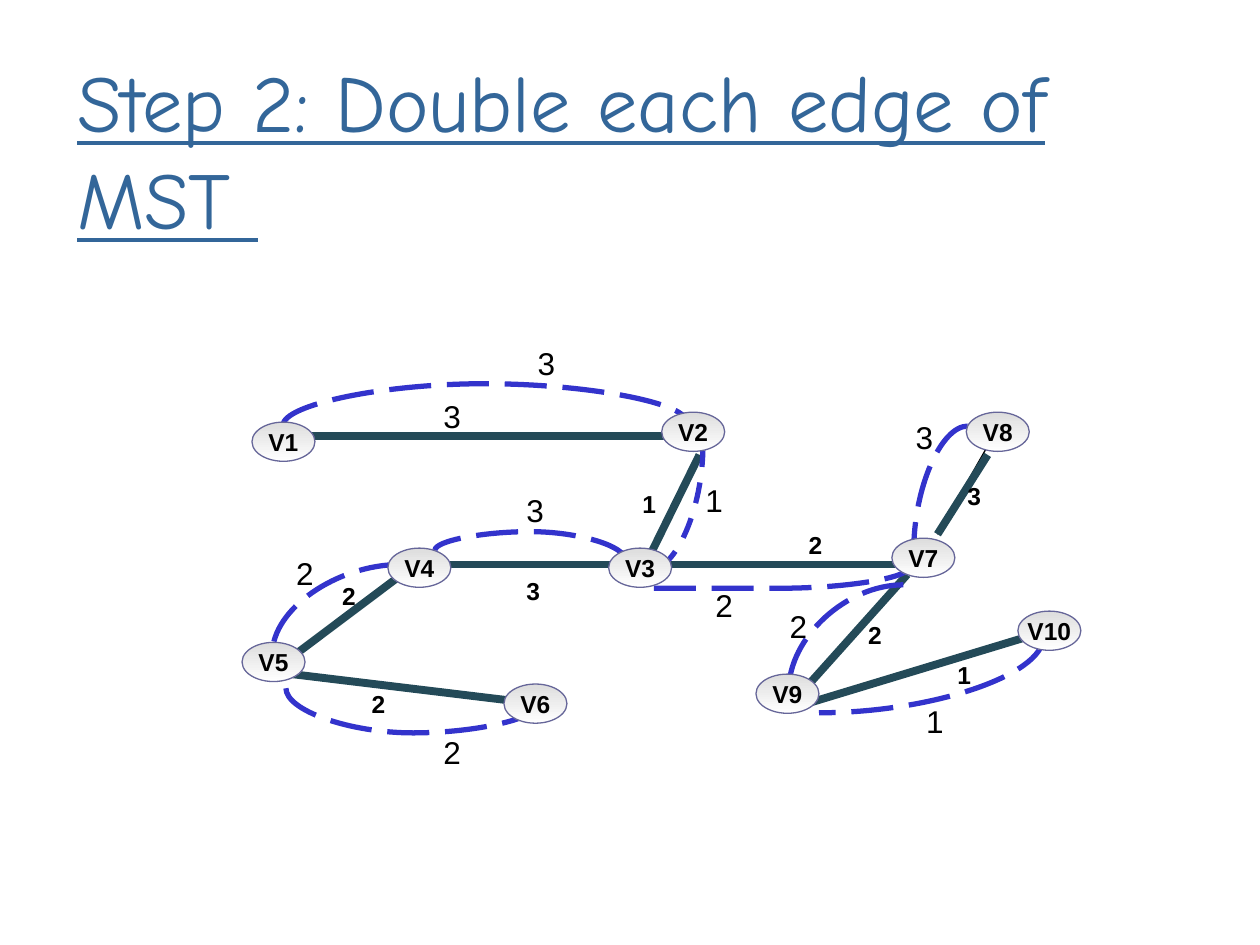
import pptx
import pptx.util
import pptx.dml.color
import pptx.enum.dml
import pptx.enum.shapes
import pptx.enum.text
import pptx.oxml.ns
import lxml.etree

Cm = pptx.util.Cm
Pt = pptx.util.Pt
RGBColor = pptx.dml.color.RGBColor
Align = pptx.enum.text.PP_ALIGN
Anchor = pptx.enum.text.MSO_ANCHOR
Dash = pptx.enum.dml.MSO_LINE
Connector = pptx.enum.shapes.MSO_CONNECTOR
qn = pptx.oxml.ns.qn

TITLE_BLUE = RGBColor(0x33, 0x66, 0x99)
BLACK = RGBColor(0x00, 0x00, 0x00)
TREE_TEAL = RGBColor(0x24, 0x4A, 0x58)
DOUBLE_BLUE = RGBColor(0x33, 0x33, 0xCC)
NODE_GREY = RGBColor(0xDD, 0xDD, 0xDD)
WHITE = RGBColor(0xFF, 0xFF, 0xFF)
NODE_OUTLINE = RGBColor(0x66, 0x66, 0x99)


def write_text(shape, text, size, font="Arial", color=BLACK, bold=False,
               underline=False, align=Align.LEFT, anchor=Anchor.TOP, wrap=False):
    frame = shape.text_frame
    frame.word_wrap = wrap
    frame.vertical_anchor = anchor
    paragraph = frame.paragraphs[0]
    paragraph.alignment = align
    run = paragraph.add_run()
    run.text = text
    run.font.size = Pt(size)
    run.font.name = font
    run.font.bold = bold
    run.font.underline = underline
    run.font.color.rgb = color


def add_line(kind, start, end, color, width):
    line = slide.shapes.add_connector(kind, *[Cm(value) for value in (*start, *end)])
    line.line.color.rgb = color
    line.line.width = Pt(width)
    lxml.etree.SubElement(line.element.spPr, qn("a:effectLst"))
    return line


presentation = pptx.Presentation()
presentation.slide_width = Cm(25.4)
presentation.slide_height = Cm(19.05)
slide = presentation.slides.add_slide(presentation.slide_layouts[5])

title = slide.shapes.title
title.left, title.top, title.width, title.height = Cm(1.3), Cm(0.91), Cm(22.43), Cm(4.19)
write_text(title, "Step 2: Double each edge of MST ", 46, font="Comic Neue",
           color=TITLE_BLUE, underline=True, anchor=Anchor.MIDDLE, wrap=True)

# start, end of the thin line, end of the thick line
tree_edges = [
    ((6.1, 8.79), (13.69, 8.79), (13.49, 8.79)),
    ((8.89, 11.38), (12.5, 11.38), (12.5, 11.38)),
    ((13.11, 11.18), (14.1, 9.17), (14.1, 9.17)),
    ((18.9, 10.77), (19.91, 8.99), (19.91, 9.17)),
    ((13.31, 11.38), (18.29, 11.38), (18.29, 11.38)),
    ((5.89, 13.59), (10.9, 14.17), (10.69, 14.17)),
    ((8.1, 11.58), (5.69, 13.39), (5.69, 13.39)),
    ((18.29, 11.58), (16.31, 13.79), (16.31, 13.79)),
    ((16.31, 14.17), (20.9, 12.78), (20.9, 12.78)),
]
for start, thin_end, thick_end in tree_edges:
    add_line(Connector.STRAIGHT, start, thin_end, BLACK, 0.75)
    add_line(Connector.STRAIGHT, start, thick_end, TREE_TEAL, 4.5)

doubled_edges = [
    (9.73, 4.47, 0.08, 8.13, 270, "", 10.5, Dash.LONG_DASH),
    (12.37, 9.7, 2.51, 1.09, 90, "", None, Dash.DASH),
    (10.59, 9.27, 0.2, 3.84, 90, "H", 2.87, Dash.LONG_DASH),
    (5.49, 11.38, 2.59, 1.8, 180, "V", None, Dash.LONG_DASH),
    (8.18, 11.46, 0.3, 5.13, 270, "H", 3, Dash.LONG_DASH),
    (15.54, 9.09, 0.41, 5.13, 90, "HV", 0, Dash.LONG_DASH),
    (18.42, 8.59, 1.09, 2.51, 180, "V", None, Dash.LONG_DASH),
    (15.9, 11.79, 2.31, 2.13, 180, "V", None, Dash.LONG_DASH),
    (18.01, 11.35, 1.52, 4.52, 90, "", None, Dash.LONG_DASH),
]
for left, top, width, height, angle, flips, bend, dash in doubled_edges:
    curve = add_line(Connector.CURVE, (left, top), (left + width, top + height), DOUBLE_BLUE, 3)
    curve.line.dash_style = dash
    transform = curve.element.spPr.find(qn("a:xfrm"))
    transform.set("rot", str(angle * 60000))
    for flip in flips:
        transform.set("flip" + flip, "1")
    geometry = curve.element.spPr.find(qn("a:prstGeom"))
    if bend is None:
        geometry.set("prst", "curvedConnector2")
    else:
        guide = lxml.etree.SubElement(geometry.find(qn("a:avLst")), qn("a:gd"))
        guide.set("name", "adj1")
        guide.set("fmla", f"val {round(bend * 100000)}")

nodes = {
    "V5": (4.88, 12.95), "V10": (20.52, 12.32), "V7": (17.98, 10.85), "V8": (19.48, 8.31),
    "V2": (13.34, 8.31), "V1": (5.08, 8.51), "V6": (10.16, 13.79), "V3": (12.27, 11.05),
    "V4": (7.82, 11.05), "V9": (15.24, 13.59),
}
for name, (left, top) in nodes.items():
    node = slide.shapes.add_shape(pptx.enum.shapes.MSO_SHAPE.FLOWCHART_CONNECTOR,
                                  Cm(left), Cm(top), Cm(1.27), Cm(0.79))
    node.shadow.inherit = False
    node.fill.gradient()
    node.fill.gradient_angle = 270
    for stop, position, color in zip(node.fill.gradient_stops, (0, 1), (NODE_GREY, WHITE)):
        stop.position = position
        stop.color.rgb = color
    node.line.color.rgb = NODE_OUTLINE
    node.line.width = Pt(0.75)
    write_text(node, name, 14, bold=True, align=Align.CENTER, anchor=Anchor.MIDDLE)

bold_weights = [
    ("1", 19.05, 13.18), ("3", 19.25, 9.58), ("2", 17.25, 12.37), ("2", 16.05, 10.57),
    ("1", 12.7, 9.73), ("2", 7.24, 13.77), ("2", 6.65, 11.58), ("3", 10.36, 11.48),
]
plain_weights = [
    ("3", 8.69, 7.87), ("3", 10.59, 6.81), ("1", 13.97, 9.58), ("3", 10.36, 9.78),
    ("2", 5.72, 11.05), ("2", 8.69, 14.66), ("3", 18.21, 8.31), ("1", 18.42, 14.02),
    ("2", 14.17, 11.68), ("2", 15.67, 12.12),
]
for weights, width, height, size, bold in ((bold_weights, 0.79, 0.84, 14, True),
                                           (plain_weights, 0.86, 1.02, 18, False)):
    for weight, left, top in weights:
        label = slide.shapes.add_textbox(Cm(left), Cm(top), Cm(width), Cm(height))
        write_text(label, weight, size, bold=bold)

presentation.save("out.pptx")
